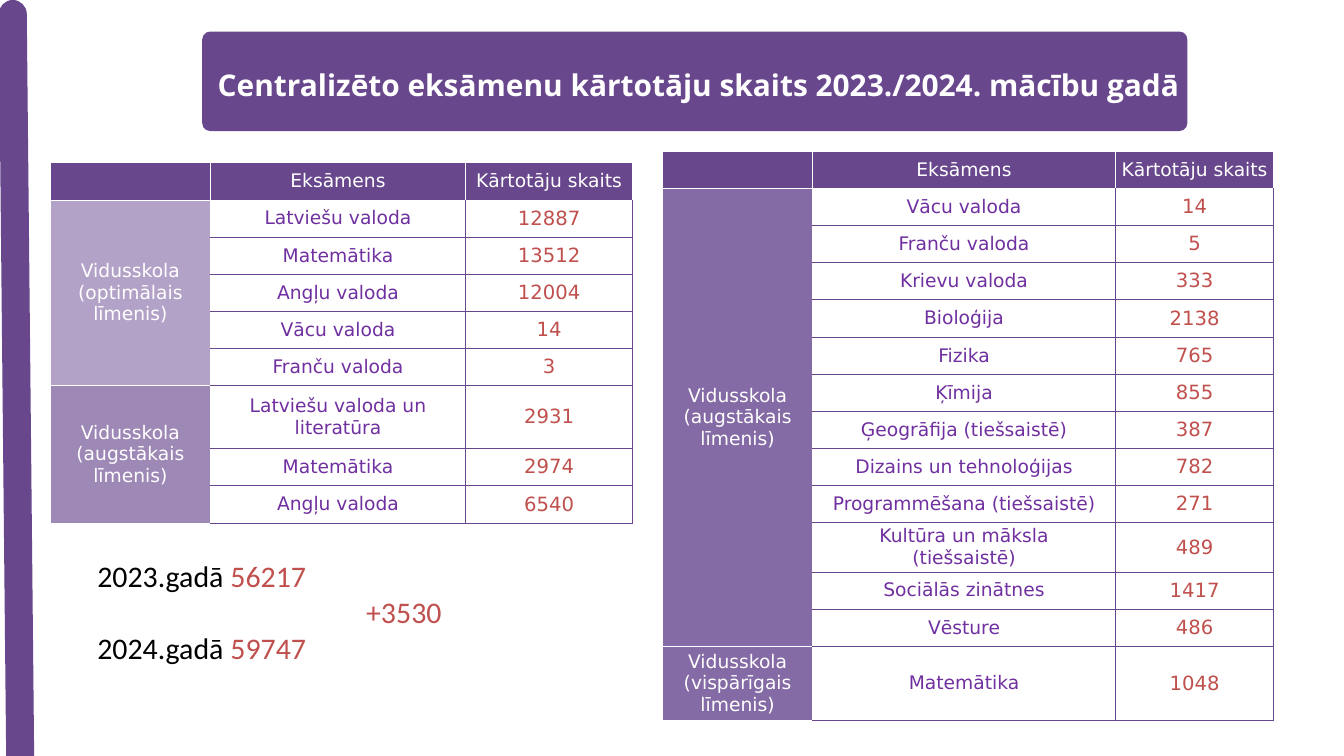
from lxml.etree import SubElement
from pptx import Presentation
from pptx.dml.color import RGBColor
from pptx.enum.shapes import MSO_CONNECTOR, MSO_SHAPE
from pptx.enum.text import MSO_ANCHOR, PP_ALIGN
from pptx.oxml.ns import qn
from pptx.util import Pt

PURPLE = RGBColor(0x68, 0x47, 0x8D)
VIOLET = RGBColor(0x70, 0x30, 0xA0)
RED = RGBColor(0xC0, 0x50, 0x4D)
WHITE = RGBColor(0xFF, 0xFF, 0xFF)
BLACK = RGBColor(0, 0, 0)
PALE = RGBColor(0xB3, 0xA2, 0xC7)
MID = RGBColor(0x9D, 0x88, 0xB6)
DEEP = RGBColor(0x85, 0x6B, 0xA5)

TITLE = "Centralizēto eksāmenu kārtotāju skaits 2023./2024. mācību gadā"
HEAD = ["", "Eksāmens", "Kārtotāju skaits"]
ROW = 39.8

LEFT = [
    ("Vidusskola (optimālais līmenis)", PALE, [
        ("Latviešu valoda", "12887"),
        ("Matemātika", "13512"),
        ("Angļu valoda", "12004"),
        ("Vācu valoda", "14"),
        ("Franču valoda", "3"),
    ]),
    ("Vidusskola (augstākais līmenis)", MID, [
        ("Latviešu valoda un literatūra", "2931"),
        ("Matemātika", "2974"),
        ("Angļu valoda", "6540"),
    ]),
]
RIGHT = [
    ("Vidusskola (augstākais līmenis)", DEEP, [
        ("Vācu valoda", "14"),
        ("Franču valoda", "5"),
        ("Krievu valoda", "333"),
        ("Bioloģija", "2138"),
        ("Fizika", "765"),
        ("Ķīmija", "855"),
        ("Ģeogrāfija (tiešsaistē)", "387"),
        ("Dizains un tehnoloģijas", "782"),
        ("Programmēšana (tiešsaistē)", "271"),
        ("Kultūra un māksla\n(tiešsaistē)", "489"),
        ("Sociālās zinātnes", "1417"),
        ("Vēsture", "486"),
    ]),
    ("Vidusskola (vispārīgais līmenis)", DEEP, [("Matemātika", "1048")]),
]
TABLES = [
    (LEFT, 54, 174.3, [171.4, 273.6, 178.6], {6: 67.6}),
    (RIGHT, 710, 162, [160.6, 324.7, 169.4], {10: 52.8, 13: 79.4}),
]
TOTALS = [
    [("2023.gadā ", BLACK), ("56217", RED)],
    [("+3530", RED)],
    [("2024.gadā ", BLACK), ("59747", RED)],
]


def write(frame, lines, font="DejaVu Sans", size=20, color=WHITE,
          bold=False, align=PP_ALIGN.LEFT):
    if isinstance(lines, str):
        lines = [[(line, color)] for line in lines.split("\n")]
    for i, line in enumerate(lines):
        para = frame.add_paragraph() if i else frame.paragraphs[0]
        para.alignment = align
        para.space_before = Pt(0)
        for part, tint in line:
            run = para.add_run()
            run.text = part
            run.font.name = font
            run.font.size = Pt(size)
            run.font.bold = bold
            run.font.color.rgb = tint


def edge(cell, **tints):
    props = cell._tc.get_or_add_tcPr()
    for side in "LRTB":
        line = SubElement(props, qn("a:ln" + side), w=str(Pt(0.75)))
        fill = SubElement(line, qn("a:solidFill"))
        SubElement(fill, qn("a:srgbClr"), val=str(tints.get(side, PURPLE)))


def style(cell, text, fill=None, **fmt):
    cell.vertical_anchor = MSO_ANCHOR.MIDDLE
    cell.margin_left = cell.margin_right = Pt(3)
    cell.margin_top = cell.margin_bottom = Pt(3)
    if fill is None:
        cell.fill.background()
    else:
        cell.fill.solid()
        cell.fill.fore_color.rgb = fill
    if text:
        write(cell.text_frame, text, align=PP_ALIGN.CENTER, **fmt)


def draw(slide, groups, left, top, widths, tall):
    count = 1 + sum(len(rows) for _, _, rows in groups)
    sizes = [tall.get(i, ROW) for i in range(count)]
    frame = slide.shapes.add_table(count, 3, Pt(left), Pt(top),
                                   Pt(sum(widths)), Pt(sum(sizes)))
    table = frame.table
    table.first_row = table.horz_banding = False
    for col, width in zip(table.columns, widths):
        col.width = Pt(width)
    for row, size in zip(table.rows, sizes):
        row.height = Pt(size)
    for r in range(count):
        for c in range(3):
            if r == 0 or c == 0:
                edge(table.cell(r, c), L=WHITE, R=WHITE, T=WHITE, B=WHITE)
            else:
                edge(table.cell(r, c), L=WHITE if c == 1 else PURPLE,
                     T=WHITE if r == 1 else PURPLE)
    for c, text in enumerate(HEAD):
        style(table.cell(0, c), text, PURPLE)
    start = 1
    for name, fill, rows in groups:
        end = start + len(rows) - 1
        if end > start:
            table.cell(start, 0).merge(table.cell(end, 0))
        style(table.cell(start, 0), name, fill)
        for r, (exam, number) in enumerate(rows, start):
            style(table.cell(r, 1), exam, color=VIOLET)
            style(table.cell(r, 2), number, color=RED, size=21)
        start = end + 1


def main():
    deck = Presentation()
    deck.slide_width, deck.slide_height = Pt(1440), Pt(810)
    slide = deck.slides.add_slide(deck.slide_layouts[5])
    shapes = slide.shapes

    bar = shapes.add_connector(MSO_CONNECTOR.STRAIGHT,
                               Pt(21.6), Pt(810), Pt(13.7), Pt(15))
    bar.line.color.rgb = PURPLE
    bar.line.width = Pt(30)
    bar.line._get_or_add_ln().set("cap", "rnd")
    SubElement(bar._element.spPr, qn("a:effectLst"))

    banner = shapes.add_shape(MSO_SHAPE.ROUNDED_RECTANGLE,
                              Pt(216.7), Pt(33.8), Pt(1055.5), Pt(106.6))
    banner.adjustments[0] = 0.08
    banner.shadow.inherit = False
    banner.fill.solid()
    banner.fill.fore_color.rgb = PURPLE
    banner.line.fill.background()

    title = shapes.title
    title.left, title.top = Pt(226), Pt(67.7)
    title.width, title.height = Pt(1055.5), Pt(46)
    title.text_frame.word_wrap = False
    title.text_frame.vertical_anchor = MSO_ANCHOR.TOP
    write(title.text_frame, TITLE, font="Open Sans", size=32, bold=True)
    title.element.getparent().append(title.element)

    for spec_row in TABLES:
        draw(slide, *spec_row)

    box = shapes.add_textbox(Pt(97.2), Pt(594), Pt(385), Pt(128))
    box.text_frame.word_wrap = True
    write(box.text_frame, TOTALS, font="Calibri", size=32)
    gain = box.text_frame.paragraphs[1]
    gain._p.get_or_add_pPr().set("marL", str(Pt(288)))

    deck.save("out.pptx")


if __name__ == "__main__":
    main()
